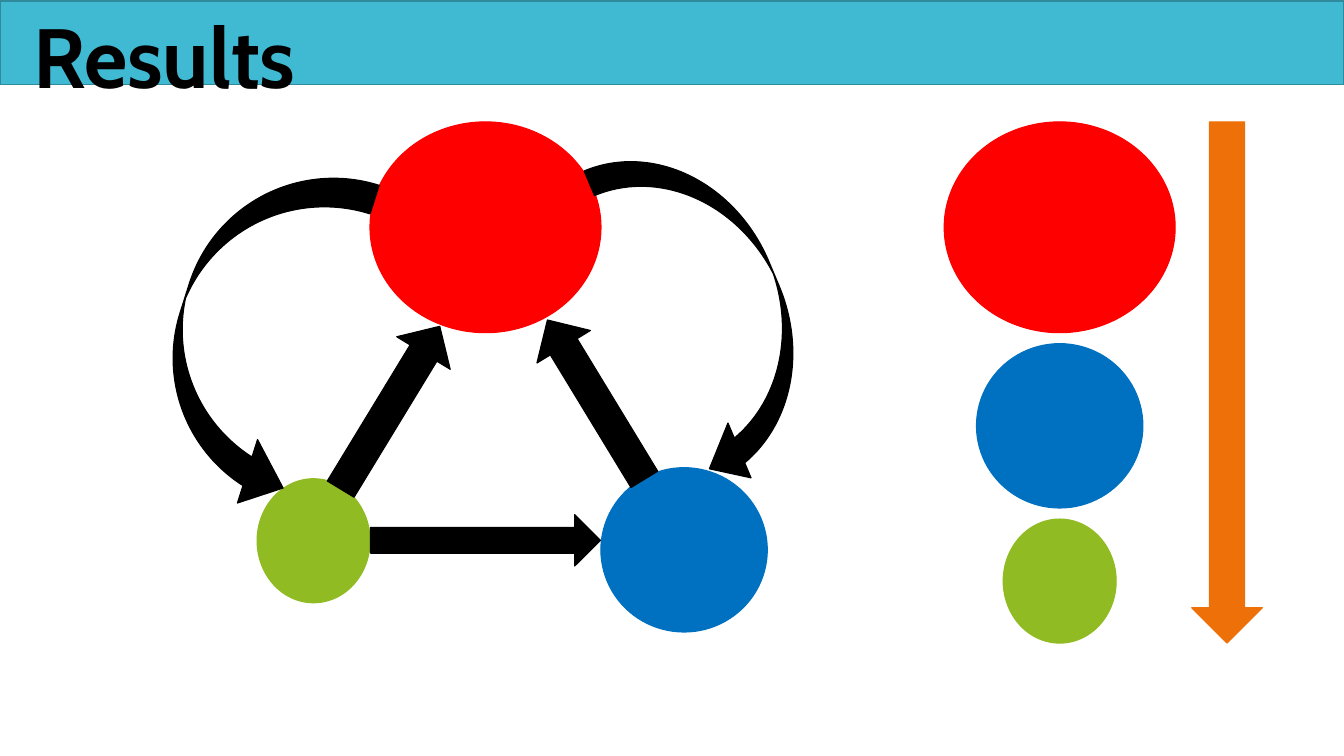
from pptx import Presentation
from pptx.dml.color import RGBColor
from pptx.enum.shapes import MSO_SHAPE
from pptx.enum.text import MSO_AUTO_SIZE
from pptx.util import Inches, Pt

ELLIPSE = MSO_SHAPE.OVAL
RECTANGLE = MSO_SHAPE.RECTANGLE
DOWN_ARROW = MSO_SHAPE.DOWN_ARROW
CURVED_ARROW = MSO_SHAPE.CURVED_UP_ARROW
GROW = MSO_AUTO_SIZE.SHAPE_TO_FIT_TEXT

SLIDE_WIDTH, SLIDE_HEIGHT = 13.33, 7.5
BLACK, ORANGE, TEAL, DARK_TEAL = "000000", "EE7008", "40BAD2", "2F8A9B"
TITLE = "Results"

NODES = [
    {"color": "FF0000", "size": (2.29, 2.09), "position": (3.67, 1.21)},
    {"color": "0070C0", "size": (1.65, 1.63), "position": (5.96, 4.64)},
    {"color": "90BB23", "size": (1.12, 1.23), "position": (2.55, 4.75)},
]
STRAIGHT_ARROWS = [
    ((4.56, 4.22, 0.51, 2.28), 270),
    ((3.56, 3.1, 0.62, 1.89), 211.3),
    ((5.6, 3.04, 0.62, 1.85), 148.7),
]
CURVED_ARROWS = [
    ((5.34, 2.38, 3.5, 1.34), 67.2, ["flipV"]),
    ((0.78, 2.52, 3.48, 1.5), 287.6, ["flipH", "flipV"]),
]
CURVE_ADJUSTMENTS = (0.198, 0.44, 0.258)
LEGEND_CENTER, LEGEND_TOP, LEGEND_GAP = 10.51, 1.21, 0.11


def color(value):
    return RGBColor.from_string(value)


def add_filled(slide, kind, box, fill, line=None, rotation=0):
    shape = slide.shapes.add_shape(kind, *map(Inches, box))
    shape.shadow.inherit = False
    shape.fill.solid()
    shape.fill.fore_color.rgb = color(fill)
    shape.line.color.rgb = color(line or fill)
    shape.line.width = Pt(0.85)
    shape.rotation = rotation
    return shape


def add_curved_arrow(slide, box, rotation, flips):
    arrow = add_filled(slide, CURVED_ARROW, box, BLACK, rotation=rotation)
    for index, value in enumerate(CURVE_ADJUSTMENTS):
        arrow.adjustments[index] = value
    for flip in flips:
        arrow.element.spPr.xfrm.set(flip, "1")


def add_network(slide):
    for node in NODES:
        add_filled(slide, ELLIPSE, node["position"] + node["size"], node["color"])
    for box, rotation in STRAIGHT_ARROWS:
        add_filled(slide, DOWN_ARROW, box, BLACK, rotation=rotation)
    for box, rotation, flips in CURVED_ARROWS:
        add_curved_arrow(slide, box, rotation, flips)


def add_legend(slide):
    top = LEGEND_TOP
    for node in NODES:
        width, height = node["size"]
        box = (LEGEND_CENTER - width / 2, top, width, height)
        add_filled(slide, ELLIPSE, box, node["color"])
        top += height + LEGEND_GAP
    arrow_height = top - LEGEND_GAP - LEGEND_TOP
    add_filled(slide, DOWN_ARROW, (11.82, LEGEND_TOP, 0.7, arrow_height), ORANGE)


def add_title(slide):
    add_filled(slide, RECTANGLE, (0, 0.01, SLIDE_WIDTH, 0.83), TEAL, DARK_TEAL)
    box = slide.shapes.add_textbox(Inches(0.23), 0, Inches(2.85), Inches(1.11))
    frame = box.text_frame
    frame.word_wrap = False
    frame.auto_size = GROW
    run = frame.paragraphs[0].add_run()
    run.text = TITLE
    run.font.name = "Cabin"
    run.font.size = Pt(60)
    run.font.bold = True
    run.font.color.rgb = color(BLACK)


def main():
    presentation = Presentation()
    presentation.slide_width = Inches(SLIDE_WIDTH)
    presentation.slide_height = Inches(SLIDE_HEIGHT)
    slide = presentation.slides.add_slide(presentation.slide_layouts[6])
    add_network(slide)
    add_legend(slide)
    add_title(slide)
    presentation.save("out.pptx")


if __name__ == "__main__":
    main()
